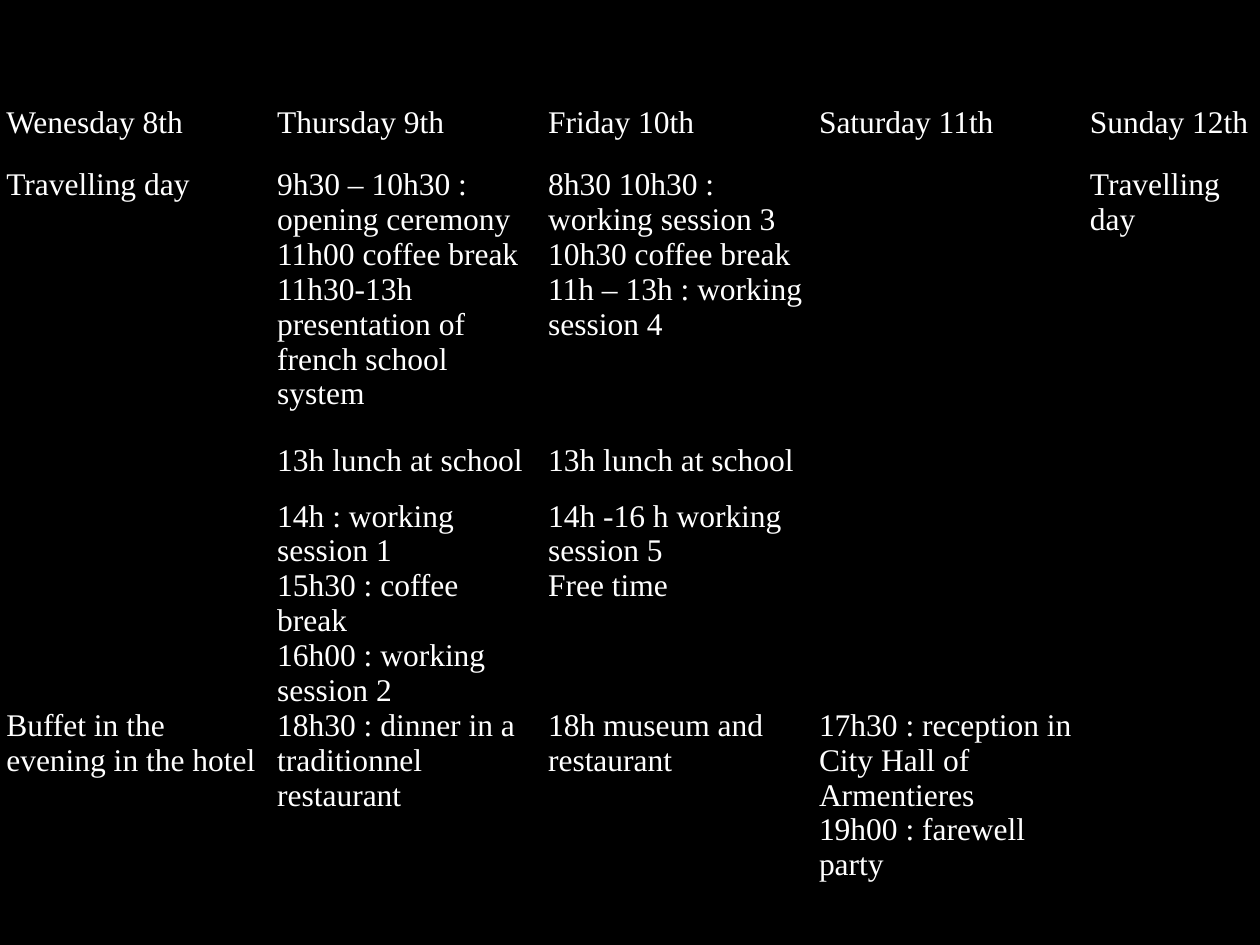
from lxml import etree
from pptx import Presentation
from pptx.dml.color import RGBColor
from pptx.oxml.ns import qn
from pptx.util import Inches, Pt

BLACK = RGBColor(0x00, 0x00, 0x00)
WHITE = RGBColor(0xFF, 0xFF, 0xFF)
BLANK_LAYOUT = 6

TEXT_FORMAT = {"name": "Times New Roman", "size": Pt(18), "bold": False}
CELL_FORMAT = {
    "margin_left": Inches(0.05),
    "margin_right": Inches(0.05),
    "margin_top": 0,
    "margin_bottom": 0,
}

COLUMN_WIDTHS = [2.15] * 4 + [1.4]
ROW_HEIGHTS = [0.49, 2.19, 0.44, 1.31, 1.31]

# Each line of a cell is one paragraph.
PROGRAMME = [
    ["Wenesday 8th", "Thursday 9th", "Friday 10th", "Saturday 11th", "Sunday 12th"],
    [
        "Travelling day",
        "9h30 – 10h30 : opening ceremony\n11h00 coffee break\n"
        "11h30-13h presentation of french school system",
        "8h30 10h30 : working session 3\n10h30 coffee break\n"
        "11h – 13h : working session 4",
        "",
        "Travelling day",
    ],
    ["", "13h lunch at school", "13h lunch at school", "", ""],
    [
        "",
        "14h : working session 1\n15h30 : coffee break\n16h00 : working session 2",
        "14h -16 h working session 5\nFree time",
        "",
        "",
    ],
    [
        "Buffet in the evening in the hotel",
        "18h30 : dinner in a traditionnel restaurant",
        "18h museum and restaurant",
        "17h30 : reception in City Hall of Armentieres\n19h00 : farewell party",
        "",
    ],
]
# Column, first row and last row of each tall cell.
VERTICAL_MERGES = [(0, 1, 3), (4, 1, 4)]


def set_borders(cell, color, width):
    properties = cell._tc.get_or_add_tcPr()
    for position, side in enumerate(("a:lnL", "a:lnR", "a:lnT", "a:lnB")):
        line = etree.Element(qn(side), w=str(width))
        fill = etree.SubElement(line, qn("a:solidFill"))
        etree.SubElement(fill, qn("a:srgbClr"), val=str(color))
        properties.insert(position, line)


def fill_cell(cell, text):
    for name, value in CELL_FORMAT.items():
        setattr(cell, name, value)
    cell.fill.background()
    set_borders(cell, BLACK, Pt(1))
    cell.text = text
    for paragraph in cell.text_frame.paragraphs:
        for name, value in TEXT_FORMAT.items():
            setattr(paragraph.font, name, value)
            for run in paragraph.runs:
                setattr(run.font, name, value)
        for run in paragraph.runs:
            run.font.color.rgb = WHITE


def add_programme(slide, left, top, width, height):
    table = slide.shapes.add_table(
        len(ROW_HEIGHTS), len(COLUMN_WIDTHS), left, top, width, height
    ).table
    table.first_row = False
    table.horz_banding = False
    for column, column_width in zip(table.columns, COLUMN_WIDTHS):
        column.width = Inches(column_width)
    for row, row_height, texts in zip(table.rows, ROW_HEIGHTS, PROGRAMME):
        row.height = Inches(row_height)
        for cell, text in zip(row.cells, texts):
            fill_cell(cell, text)
    for column, first, last in VERTICAL_MERGES:
        table.cell(first, column).merge(table.cell(last, column))


def main():
    presentation = Presentation()
    presentation.slide_width = Inches(10)
    presentation.slide_height = Inches(7.5)
    slide = presentation.slides.add_slide(presentation.slide_layouts[BLANK_LAYOUT])
    background = slide.background.fill
    background.solid()
    background.fore_color.rgb = BLACK
    add_programme(slide, 0, Inches(0.84), Inches(10), Inches(6.42))
    presentation.save("out.pptx")


if __name__ == "__main__":
    main()
